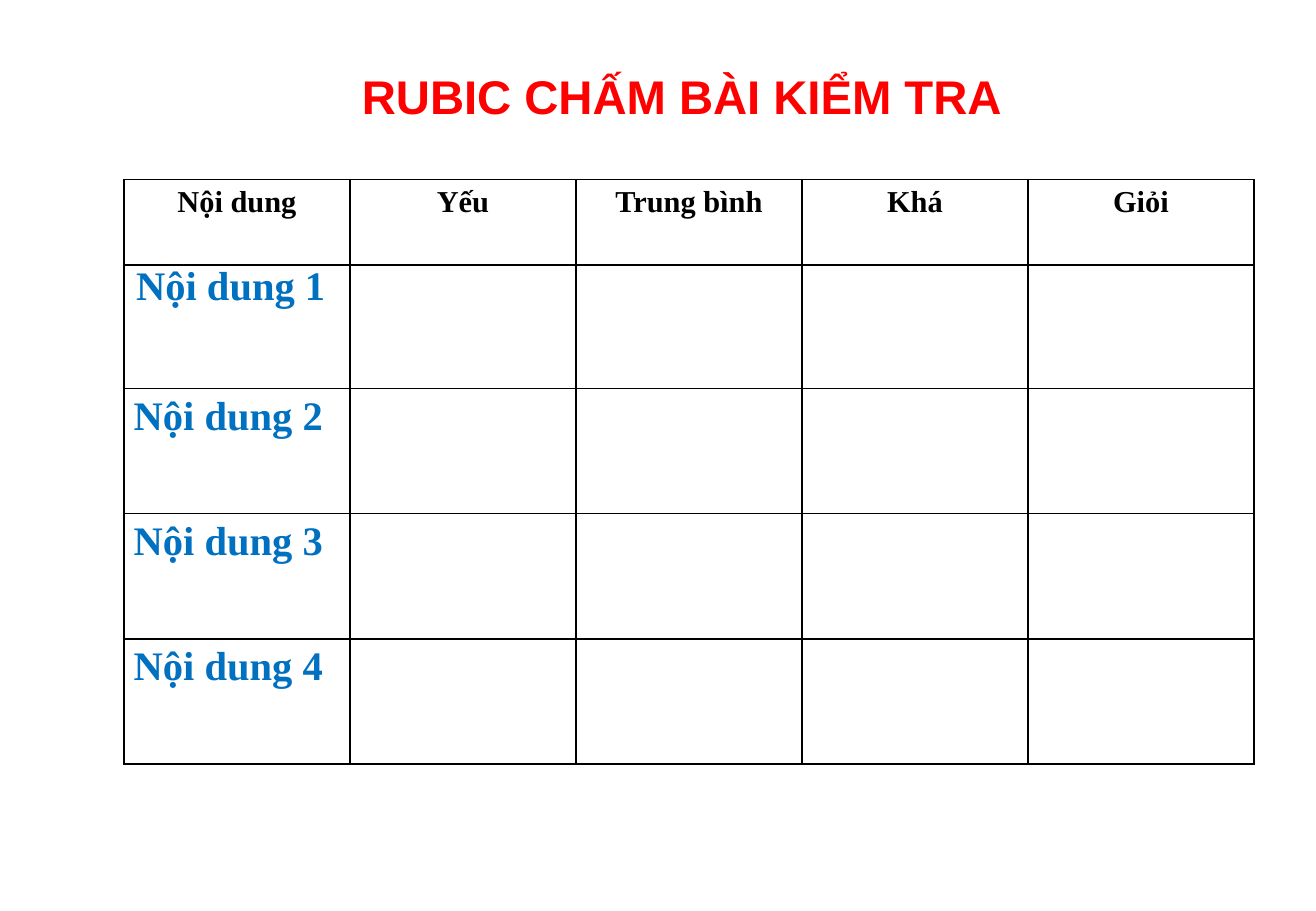
from typing import NamedTuple

from lxml.etree import SubElement
from pptx import Presentation
from pptx.dml.color import RGBColor
from pptx.enum.text import MSO_ANCHOR as Anchor, PP_ALIGN as Align
from pptx.oxml.ns import qn
from pptx.table import _Cell as Cell
from pptx.text.text import TextFrame
from pptx.util import Inches, Pt

RED = RGBColor(0xFF, 0x00, 0x00)
BLACK = RGBColor(0x00, 0x00, 0x00)
BLUE = RGBColor(0x00, 0x70, 0xC0)


class Row(NamedTuple):
    texts: list[str]
    height: float
    size: int
    color: RGBColor
    align: Align
    inset_x: float = 0.08
    inset_y: float = 0.05


LEVELS = ["Nội dung", "Yếu", "Trung bình", "Khá", "Giỏi"]
COLUMN_WIDTH = 1.86
ROWS = [
    Row(LEVELS, 0.7, 18, BLACK, Align.CENTER),
    Row(["Nội dung 1"], 1.02, 24, BLUE, Align.LEFT, 0.1, 0),
    *(Row([f"Nội dung {n}"], 1.03, 24, BLUE, Align.LEFT) for n in (2, 3, 4)),
]


def write(tf: TextFrame, text: str, *, size: int, color: RGBColor,
          font: str = "Times New Roman", align: Align = Align.LEFT) -> None:
    p = tf.paragraphs[0]
    p.alignment = align
    r = p.add_run()
    r.text = text
    r.font.name = font
    r.font.size = Pt(size)
    r.font.bold = True
    r.font.color.rgb = color


def set_borders(cell: Cell, color: RGBColor, width: float) -> None:
    tc_pr = cell._tc.get_or_add_tcPr()
    for side in ("a:lnL", "a:lnR", "a:lnT", "a:lnB"):
        line = SubElement(tc_pr, qn(side), w=str(Pt(width)))
        fill = SubElement(line, qn("a:solidFill"))
        SubElement(fill, qn("a:srgbClr"), val=str(color))


def format_cell(cell: Cell, row: Row) -> None:
    set_borders(cell, BLACK, 1)
    cell.fill.background()
    cell.margin_left = cell.margin_right = Inches(row.inset_x)
    cell.margin_top = cell.margin_bottom = Inches(row.inset_y)


def main() -> None:
    prs = Presentation()
    prs.slide_width, prs.slide_height = Inches(10.83), Inches(7.5)
    s = prs.slides.add_slide(prs.slide_layouts[5])

    title = s.shapes.title
    title.left, title.top = Inches(2.87), Inches(0.5)
    title.width, title.height = Inches(5.48), Inches(0.57)
    tf = title.text_frame
    tf.word_wrap = True
    tf.vertical_anchor = Anchor.MIDDLE
    write(tf, "RUBIC CHẤM BÀI KIỂM TRA", size=28, color=RED, font="Arial",
          align=Align.CENTER)

    table = s.shapes.add_table(
        len(ROWS), len(LEVELS), Inches(1.02), Inches(1.48),
        Inches(COLUMN_WIDTH * len(LEVELS)),
        Inches(sum(row.height for row in ROWS))).table
    table.horz_banding = False
    table.first_row = False
    for column in table.columns:
        column.width = Inches(COLUMN_WIDTH)
    for table_row, row in zip(table.rows, ROWS):
        table_row.height = Inches(row.height)
        for cell in table_row.cells:
            format_cell(cell, row)
        for cell, text in zip(table_row.cells, row.texts):
            write(cell.text_frame, text, size=row.size, color=row.color,
                  align=row.align)

    prs.save("out.pptx")


if __name__ == "__main__":
    main()
